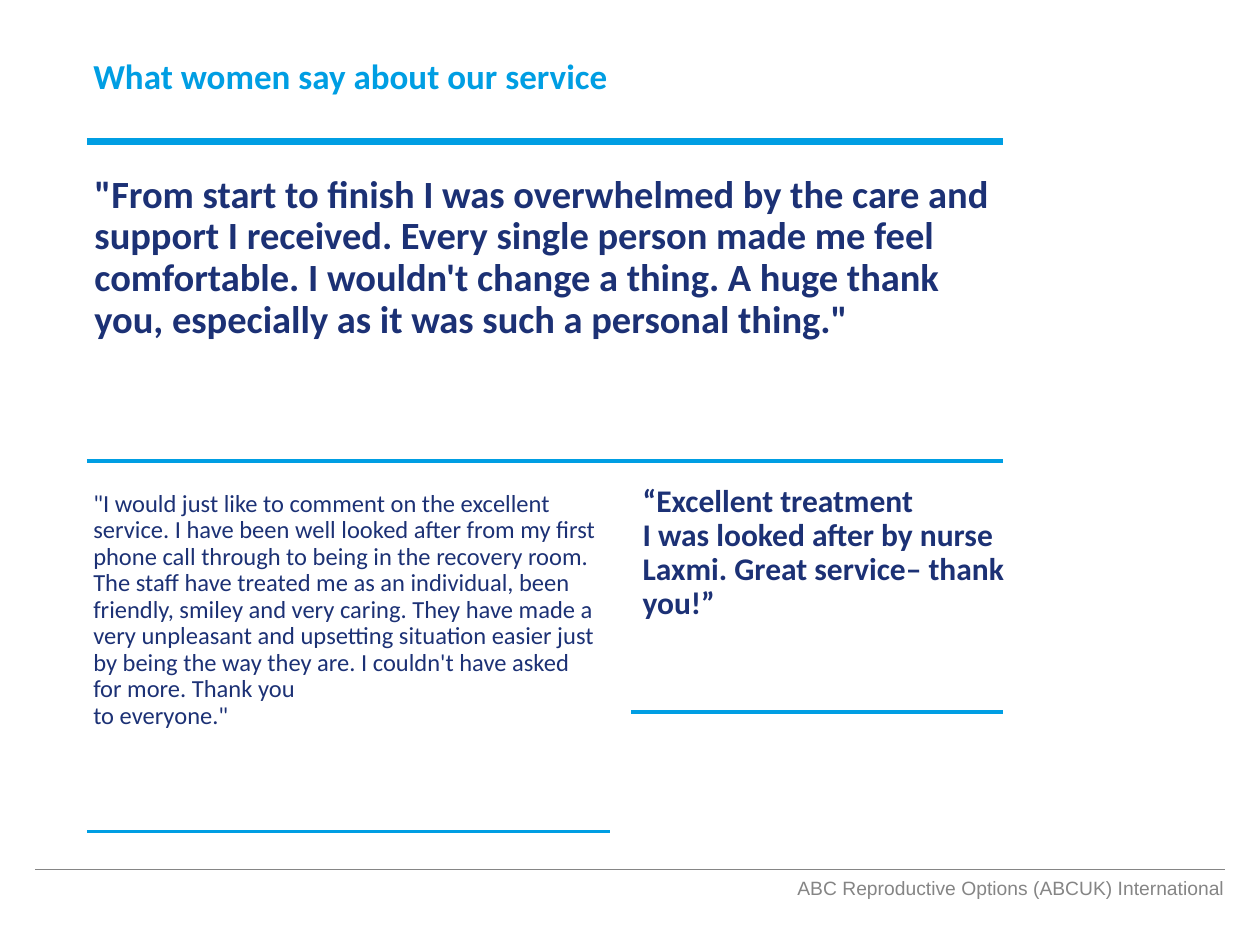
from pptx import Presentation
from pptx.dml.color import RGBColor
from pptx.enum.shapes import MSO_CONNECTOR
from pptx.enum.text import MSO_ANCHOR, MSO_AUTO_SIZE, PP_ALIGN
from pptx.oxml.ns import qn
from pptx.util import Inches, Pt
from lxml.etree import SubElement

SKY = RGBColor(0x00, 0x9E, 0xE3)
NAVY = RGBColor(0x1C, 0x31, 0x75)
GREY = RGBColor(0x85, 0x85, 0x85)

# Column and row edges, in inches
LEFT, LEFT_END = 0.69, 4.84
RIGHT, RIGHT_END = 5.01, 7.96
QUOTES_TOP = 3.85
FOOTER_LEFT, FOOTER_END, FOOTER_TOP = 0.28, 9.72, 6.9


def write(shape, box, text, size, color, bold=False, font="Calibri",
          align=PP_ALIGN.LEFT, anchor=MSO_ANCHOR.TOP, side=0.05, top=0.05, spacing=0.9):
    shape.left, shape.top, shape.width, shape.height = map(Inches, box)
    frame = shape.text_frame
    frame.text = text
    frame.word_wrap = True
    frame.auto_size = MSO_AUTO_SIZE.NONE
    frame.vertical_anchor = anchor
    frame.margin_left = frame.margin_right = Inches(side)
    frame.margin_top, frame.margin_bottom = Inches(top), Inches(0.05)
    for paragraph in frame.paragraphs:
        paragraph.alignment = align
        paragraph.line_spacing = spacing
        paragraph.space_before = Pt(0)
        for run in paragraph.runs:
            run.font.name = font
            run.font.size = Pt(size)
            run.font.bold = bold
            run.font.color.rgb = color


presentation = Presentation()
presentation.slide_width, presentation.slide_height = Inches(10), Inches(7.5)
slide = presentation.slides.add_slide(presentation.slide_layouts[0])
shapes = slide.shapes

# Rules: start, end, height on the slide, weight, colour
rules = [
    (FOOTER_LEFT, FOOTER_END, FOOTER_TOP, 1, GREY),
    (LEFT, RIGHT_END, 1.125, 4, SKY),
    (LEFT, RIGHT_END, 3.66, 2, SKY),
    (RIGHT, RIGHT_END, 5.65, 2, SKY),
    (LEFT, LEFT_END, 6.6, 2, SKY),
]
for start, end, y, weight, color in rules:
    rule = shapes.add_connector(MSO_CONNECTOR.STRAIGHT, Inches(start), Inches(y),
                                Inches(end), Inches(y))
    rule.line.width = Pt(weight)
    rule.line.color.rgb = color
    SubElement(rule._element.spPr, qn("a:effectLst"))

write(shapes.title, (LEFT, 0.42, 9, 0.9), "What women say about our service", 20, SKY, bold=True)

write(slide.placeholders[1], (5.1, QUOTES_TOP, 2.95, 2.6),
      "“Excellent treatment\n"
      "I was looked after by nurse Laxmi. Great service– thank you!”",
      18, NAVY, bold=True, side=0, top=0)

lead_quote = shapes.add_textbox(0, 0, 0, 0)
write(lead_quote, (0.7, 1.34, 7.27, 2.08),
      "\"From start to finish I was overwhelmed by the care and support I received. "
      "Every single person made me feel comfortable. I wouldn't change a thing. "
      "A huge thank you, especially as it was such a personal thing.\"",
      22, NAVY, bold=True)

long_quote = shapes.add_textbox(0, 0, 0, 0)
write(long_quote, (LEFT, QUOTES_TOP, LEFT_END - LEFT, 3.03),
      "\"I would just like to comment on the excellent service. I have been well looked "
      "after from my first phone call through to being in the recovery room. The staff "
      "have treated me as an individual, been friendly, smiley and very caring. They have "
      "made a very unpleasant and upsetting situation easier just by being the way they "
      "are. I couldn't have asked for more. Thank you \vto everyone.\"",
      14, NAVY)

footer = shapes.add_textbox(0, 0, 0, 0)
write(footer, (4.93, 6.91, FOOTER_END - 4.93, 0.27),
      "ABC Reproductive Options (ABCUK) International", 11, GREY, font="Arial",
      align=PP_ALIGN.RIGHT, anchor=MSO_ANCHOR.MIDDLE, side=0, spacing=1.0)

presentation.save("out.pptx")
